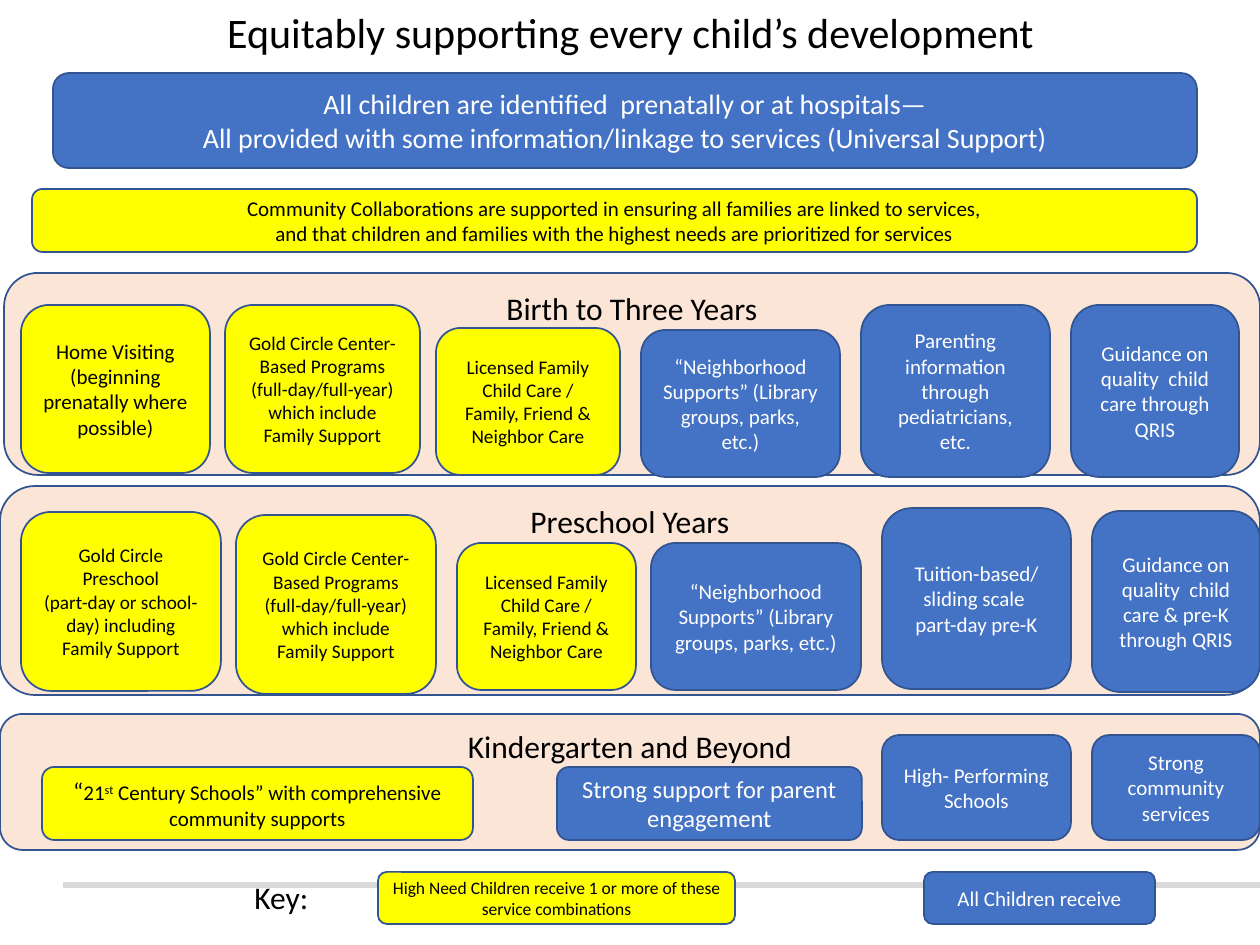
from dataclasses import dataclass
from typing import NamedTuple
from pptx import Presentation
from pptx import util as u
from pptx.dml.color import RGBColor
from pptx.enum import shapes, text
from pptx.oxml.ns import qn
from lxml import etree

SCALE = 914400 / 126
FONT = "Calibri"
BLACK, WHITE, EDGE, RULE = "000000", "FFFFFF", "325491", "D9D9D9"
YELLOW, BLUE, PEACH = "FFFF00", "4472C4", "FBE5D6"
INK = {YELLOW: BLACK, BLUE: WHITE, PEACH: BLACK}


class Box(NamedTuple):
    left: int
    top: int
    width: int
    height: int


class Span(NamedTuple):
    words: str
    size: int
    base: int = 0


@dataclass
class Card:
    box: Box
    words: str | list[Span]
    fill: str = YELLOW
    size: int = 12


@dataclass
class Band:
    box: Box
    title: str
    cards: list[Card]


def px(n: int) -> u.Emu:
    return u.Emu(round(n * SCALE))


def tint(code: str) -> RGBColor:
    return RGBColor.from_string(code)


def write(frame, words: str | list[Span], *, size: int = 12, ink: str = BLACK,
          align=text.PP_ALIGN.CENTER, anchor=text.MSO_ANCHOR.MIDDLE) -> None:
    frame.word_wrap = True
    frame.vertical_anchor = anchor
    if isinstance(words, str):
        lines = [[Span(line, size)] for line in words.split("\n")]
    else:
        lines = [words]
    for i, line in enumerate(lines):
        para = frame.add_paragraph() if i else frame.paragraphs[0]
        para.alignment = align
        for span in line:
            run = para.add_run()
            run.text = span.words
            run.font.name = FONT
            run.font.size = u.Pt(span.size)
            run.font.color.rgb = tint(ink)
            if span.base:
                run.font._element.set("baseline", str(span.base * 1000))


def panel(slide, box: Box, fill: str):
    shape = slide.shapes.add_shape(
        shapes.MSO_SHAPE.ROUNDED_RECTANGLE, *map(px, box))
    shape.shadow.inherit = False
    shape.fill.solid()
    shape.fill.fore_color.rgb = tint(fill)
    shape.line.color.rgb = tint(EDGE)
    shape.line.width = u.Pt(1)
    return shape


def draw_card(slide, card: Card) -> None:
    shape = panel(slide, card.box, card.fill)
    write(shape.text_frame, card.words, size=card.size, ink=INK[card.fill])


def draw_band(slide, band: Band) -> None:
    shape = panel(slide, band.box, PEACH)
    write(shape.text_frame, band.title, size=18, anchor=text.MSO_ANCHOR.TOP)
    for card in band.cards:
        draw_card(slide, card)


def draw_rule(slide) -> None:
    rule = slide.shapes.add_connector(
        shapes.MSO_CONNECTOR.STRAIGHT, px(63), px(885), px(1260), px(885))
    rule.line.color.rgb = tint(RULE)
    rule.line.width = u.Pt(3)
    etree.SubElement(rule._element.spPr, qn("a:effectLst"))


CENTER = ("Gold Circle Center-Based Programs (full-day/full-year)\n"
          "which include Family Support")
FAMILY = "Licensed Family Child Care /\nFamily, Friend & Neighbor Care"
LOCAL = "“Neighborhood Supports” (Library groups, parks, etc.)"

TOP = [
    Card(Box(53, 73, 1144, 95),
         "All children are identified  prenatally or at hospitals—\n"
         "All provided with some information/linkage to services "
         "(Universal Support)", BLUE, 16),
    Card(Box(32, 189, 1165, 63),
         "Community Collaborations are supported in ensuring all families "
         "are linked to services,\nand that children and families with the "
         "highest needs are prioritized for services"),
]

BANDS = [
    Band(Box(4, 273, 1256, 202), "Birth to Three Years", [
        Card(Box(225, 305, 195, 168), CENTER, size=11),
        Card(Box(21, 305, 189, 168),
             "Home Visiting (beginning prenatally where possible)"),
        Card(Box(436, 328, 184, 147), FAMILY, size=11),
        Card(Box(641, 330, 199, 147), LOCAL, BLUE),
        Card(Box(861, 305, 189, 172),
             "Parenting information through pediatricians, etc.", BLUE),
        Card(Box(1071, 305, 168, 172),
             "Guidance on quality  child care through QRIS", BLUE),
    ]),
    Band(Box(0, 486, 1260, 209), "Preschool Years", [
        Card(Box(236, 515, 200, 179), CENTER, size=11),
        Card(Box(457, 543, 179, 147), FAMILY, size=11),
        Card(Box(21, 512, 200, 179),
             "Gold Circle\nPreschool\n"
             "(part-day or school-day) including Family Support", size=11),
        Card(Box(651, 543, 210, 147), LOCAL, BLUE),
        Card(Box(1092, 511, 168, 181),
             "Guidance on quality  child care & pre-K through QRIS", BLUE),
        Card(Box(882, 508, 189, 181),
             "Tuition-based/sliding scale  part-day pre-K", BLUE),
    ]),
    Band(Box(0, 714, 1260, 136), "Kindergarten and Beyond", [
        Card(Box(882, 735, 189, 105), "High- Performing Schools", BLUE),
        Card(Box(1092, 735, 168, 105), "Strong community services", BLUE),
        Card(Box(42, 767, 431, 73), [
            Span("“", 14), Span("21", 12), Span("st", 12, 30),
            Span(" Century Schools” with comprehensive community supports", 12),
        ]),
        Card(Box(557, 767, 305, 73),
             "Strong support for parent engagement", BLUE, 14),
    ]),
]

KEY = [
    Card(Box(378, 872, 357, 52),
         "High Need Children receive 1 or more of these service combinations",
         size=10),
    Card(Box(924, 872, 231, 52), "All Children receive", BLUE),
]


def main() -> None:
    deck = Presentation()
    deck.slide_width, deck.slide_height = px(1260), px(945)
    slide = deck.slides.add_slide(deck.slide_layouts[5])
    head = slide.shapes.title
    head.left, head.top, head.width, head.height = map(
        px, Box(116, 0, 1029, 63))
    write(head.text_frame, "Equitably supporting every child’s development",
          size=24, anchor=text.MSO_ANCHOR.TOP)
    draw_rule(slide)
    for card in TOP:
        draw_card(slide, card)
    for band in BANDS:
        draw_band(slide, band)
    for card in KEY:
        draw_card(slide, card)
    label = slide.shapes.add_textbox(*map(px, Box(242, 872, 179, 50)))
    write(label.text_frame, "Key:", size=18, align=text.PP_ALIGN.LEFT,
          anchor=text.MSO_ANCHOR.TOP)
    deck.save("out.pptx")


if __name__ == "__main__":
    main()
